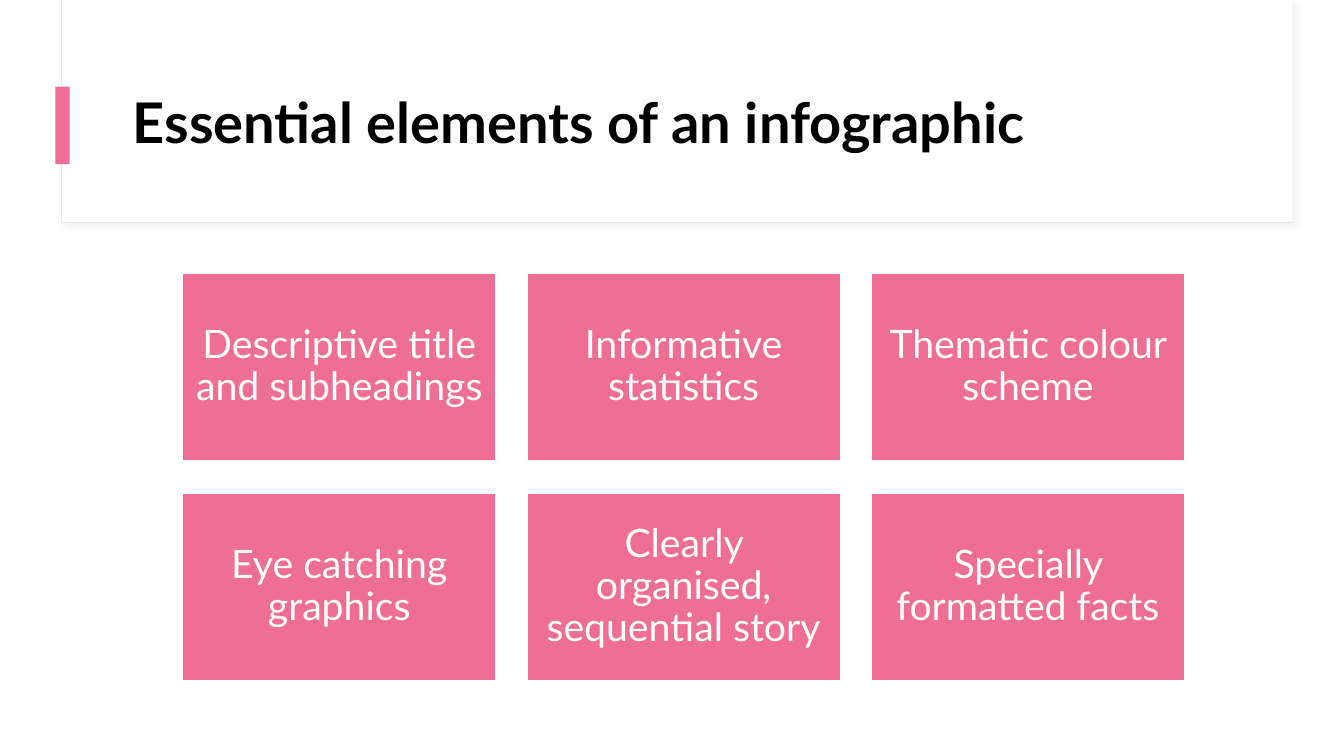
from lxml.etree import SubElement
from pptx import Presentation
from pptx.dml.color import RGBColor
from pptx.enum.shapes import MSO_SHAPE
from pptx.enum.text import MSO_ANCHOR, PP_ALIGN
from pptx.oxml.ns import qn
from pptx.util import Inches, Pt

THEME = {
    "font": "Lato",
    "pink": RGBColor.from_string("EE6E96"),
    "white": RGBColor.from_string("FFFFFF"),
    "black": RGBColor.from_string("000000"),
    "border": RGBColor.from_string("EAE5F0"),
    "shadow": "D9D9D9",
    "title_size": Pt(40),
    "card_size": Pt(28),
}


def add_panel(page, area, fill, line=None, line_width=0):
    panel = page.shapes.add_shape(MSO_SHAPE.RECTANGLE, *map(Inches, area))
    panel.shadow.inherit = False
    panel.fill.solid()
    panel.fill.fore_color.rgb = fill
    if line is None:
        panel.line.fill.background()
    else:
        panel.line.color.rgb = line
        panel.line.width = Pt(line_width)
    return panel


def write_text(box, text, alignment, inset, font):
    frame = box.text_frame
    frame.word_wrap = True
    frame.vertical_anchor = MSO_ANCHOR.MIDDLE
    for name, value in inset.items():
        setattr(frame, f"margin_{name}", Inches(value))
    para = frame.paragraphs[0]
    para.alignment = alignment
    para.line_spacing = 0.9
    span = para.add_run()
    span.text = text
    span.font.name = THEME["font"]
    for name, value in font.items():
        setattr(span.font, name, value)


deck = Presentation()
deck.slide_width = Inches(13.33)
deck.slide_height = Inches(7.5)
page = deck.slides.add_slide(deck.slide_layouts[6])

header = add_panel(page, (0.61, 0, 12.21, 2.21), THEME["white"], THEME["border"], 0.75)
effects = header.shadow._element.find(qn("a:effectLst"))
shadow = SubElement(
    effects, qn("a:outerShdw"),
    blurRad=str(Pt(4)), dist=str(Pt(3)), dir=str(45 * 60000), algn="tl", rotWithShape="0",
)
shade = SubElement(shadow, qn("a:srgbClr"), val=THEME["shadow"])
SubElement(shade, qn("a:alpha"), val="30000")
add_panel(page, (0.62, 0, 12.2, 2.2), THEME["white"])
add_panel(page, (0.55, 0.86, 0.14, 0.77), THEME["pink"])

title = page.shapes.add_textbox(*map(Inches, (1.22, 0.6, 11.12, 1.29)))
write_text(
    title, "Essential elements of an infographic", PP_ALIGN.LEFT,
    {"left": 0.1, "right": 0.1, "top": 0.05, "bottom": 0.05},
    {"size": THEME["title_size"], "bold": True},
)
title.text_frame.paragraphs[0].runs[0].font.color.rgb = THEME["black"]

cards = [
    "Descriptive title and subheadings",
    "Informative statistics",
    "Thematic colour scheme",
    "Eye catching graphics",
    "Clearly organised, sequential story",
    "Specially formatted facts",
]
columns = 3
grid_left, grid_top, grid_width = 1.81, 2.71, 9.94
card_width, card_height = 3.11, 1.86
gap = (grid_width - columns * card_width) / (columns - 1)
row_pitch = 2.18

for index, label in enumerate(cards):
    row, column = divmod(index, columns)
    area = (
        grid_left + column * (card_width + gap),
        grid_top + row * row_pitch,
        card_width,
        card_height,
    )
    card = add_panel(page, area, THEME["pink"], THEME["white"], 1)
    write_text(
        card, label, PP_ALIGN.CENTER,
        dict.fromkeys(("left", "right", "top", "bottom"), 0.12),
        {"size": THEME["card_size"]},
    )
    card.text_frame.paragraphs[0].runs[0].font.color.rgb = THEME["white"]

deck.save("out.pptx")
